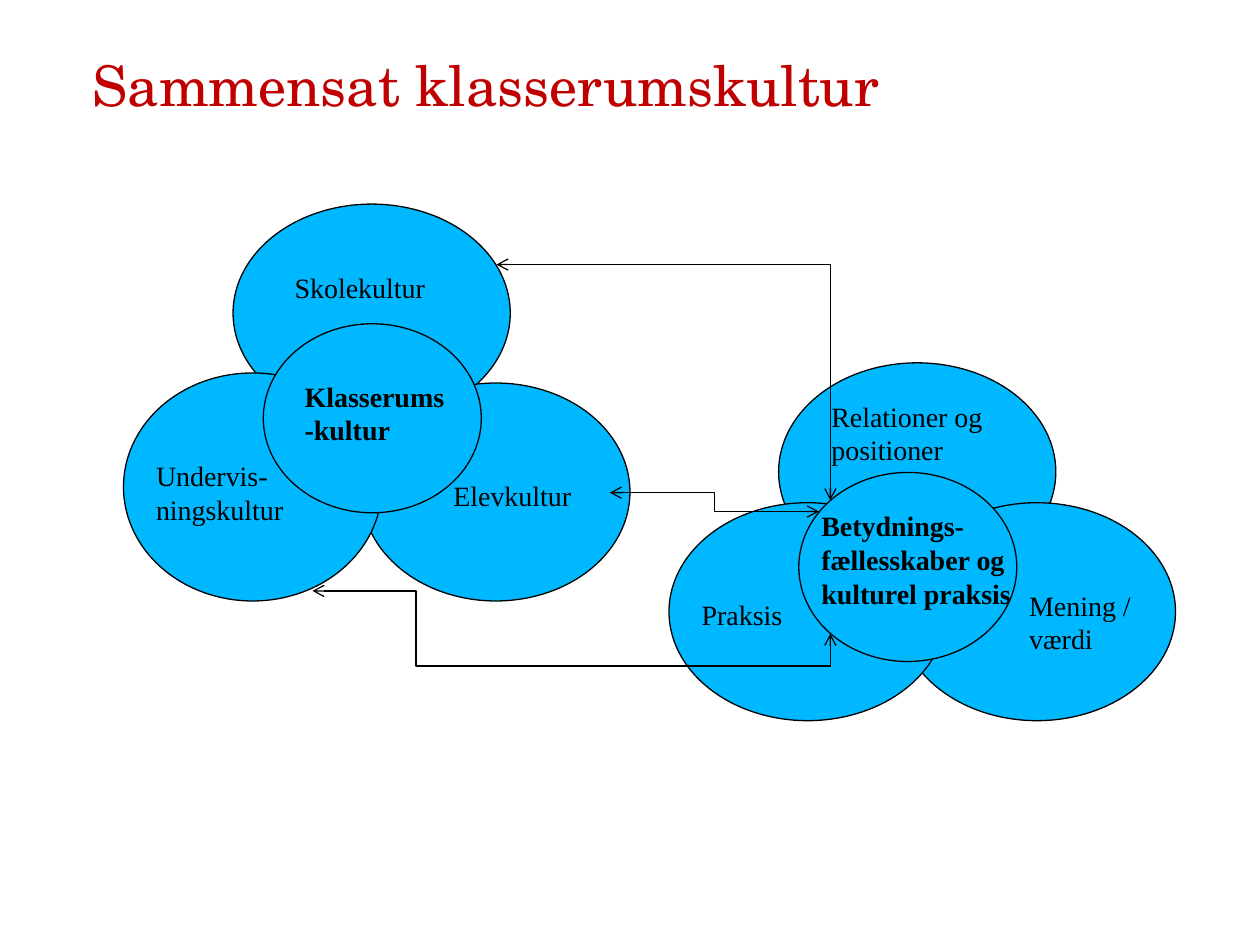
from dataclasses import dataclass

from lxml import etree
from pptx import Presentation
from pptx.dml.color import RGBColor
from pptx.enum.shapes import MSO_CONNECTOR as CONN, MSO_SHAPE as SHAPE
from pptx.enum.text import MSO_ANCHOR as ANCHOR, MSO_AUTO_SIZE as AUTO, PP_ALIGN as ALIGN
from pptx.oxml.ns import qn
from pptx.util import Inches, Pt


@dataclass(frozen=True)
class Theme:
    title_color: RGBColor = RGBColor(0xC0, 0x00, 0x00)
    ink: RGBColor = RGBColor(0x00, 0x00, 0x00)
    circle: RGBColor = RGBColor(0x00, 0xB8, 0xFF)
    title_font: str = "TeX Gyre Schola"
    body_font: str = "Times New Roman"
    title_size: int = 32
    body_size: int = 16
    line_width: float = 0.75


def write(tf, text, font, size, color, bold=False, align=ALIGN.LEFT):
    p = tf.paragraphs[0]
    p.alignment = align
    r = p.add_run()
    r.text = text
    r.font.name = font
    r.font.size = Pt(size)
    r.font.bold = bold
    r.font.color.rgb = color


class Board:
    def __init__(self, slide, theme):
        self.s = slide
        self.t = theme

    def box(self, at):
        tf = self.s.shapes.add_textbox(*map(Inches, at)).text_frame
        tf.word_wrap = True
        return tf

    def title(self, text, at):
        tf = self.box(at)
        tf.vertical_anchor = ANCHOR.MIDDLE
        write(tf, text, self.t.title_font, self.t.title_size,
              self.t.title_color, align=ALIGN.CENTER)

    def label(self, text, at, bold=False):
        tf = self.box(at)
        tf.auto_size = AUTO.SHAPE_TO_FIT_TEXT
        write(tf, text, self.t.body_font, self.t.body_size, self.t.ink, bold=bold)

    def outline(self, line):
        line.color.rgb = self.t.ink
        line.width = Pt(self.t.line_width)

    def ellipse(self, at):
        sp = self.s.shapes.add_shape(SHAPE.OVAL, *map(Inches, at))
        sp.shadow.inherit = False
        sp.fill.solid()
        sp.fill.fore_color.rgb = self.t.circle
        self.outline(sp.line)

    def elbow(self, start, end, preset, adjust=()):
        c = self.s.shapes.add_connector(CONN.ELBOW, *map(Inches, start + end))
        self.outline(c.line)
        pr = c._element.spPr
        geom = pr.find(qn("a:prstGeom"))
        geom.set("prst", preset)
        av = geom.find(qn("a:avLst"))
        if av is None:
            av = etree.SubElement(geom, qn("a:avLst"))
        for i, value in enumerate(adjust, 1):
            etree.SubElement(av, qn("a:gd"), name=f"adj{i}", fmla=f"val {round(value * 100000)}")
        ln = pr.find(qn("a:ln"))
        for end_tag in ("a:headEnd", "a:tailEnd"):
            etree.SubElement(ln, qn(end_tag), type="arrow")
        etree.SubElement(pr, qn("a:effectLst"))


def main():
    prs = Presentation()
    prs.slide_width, prs.slide_height = Inches(10), Inches(7.5)
    board = Board(prs.slides.add_slide(prs.slide_layouts[6]), Theme())

    board.title("Sammensat klasserumskultur", (0.2, 0.08, 7.32, 1.18))

    large, core = (2.2, 1.73), (1.73, 1.5)
    classroom = [
        ((1.85, 1.62, *large), "Skolekultur", (2.24, 2.1, 1.26, 0.37), False),
        ((2.87, 3.04, 2.13, 1.73), "Elevkultur", (3.5, 3.75, 1.18, 0.37), False),
        ((0.98, 2.96, 2.05, 1.81), "Undervis-ningskultur", (1.14, 3.59, 1.5, 0.64), False),
        ((2.09, 2.57, *core), "Klasserums-kultur", (2.32, 2.96, 1.34, 0.64), True),
    ]
    for circle, text, at, bold in classroom:
        board.ellipse(circle)
        board.label(text, at, bold=bold)

    for left, top, size in [(6.18, 2.88, large), (7.13, 3.99, large),
                            (5.31, 3.99, large), (6.34, 3.75, core)]:
        board.ellipse((left, top, *size))
    board.label("Mening / værdi", (8.07, 4.62, 1.34, 0.64))
    board.label("Praksis", (5.47, 4.69, 0.94, 0.37))
    board.label("Relationer og positioner", (6.5, 3.12, 1.57, 0.64))
    board.label("Betydnings-fællesskaber og kulturel praksis",
                (6.42, 3.99, 1.73, 0.91), bold=True)

    board.elbow((3.94, 2.1), (6.59, 3.97), "bentConnector2")
    board.elbow((4.84, 3.91), (6.5, 4.06), "bentConnector3")
    board.elbow((2.48, 4.69), (6.59, 5.03), "bentConnector4", adjust=(0.2, 1.75))

    prs.save("out.pptx")


if __name__ == "__main__":
    main()
